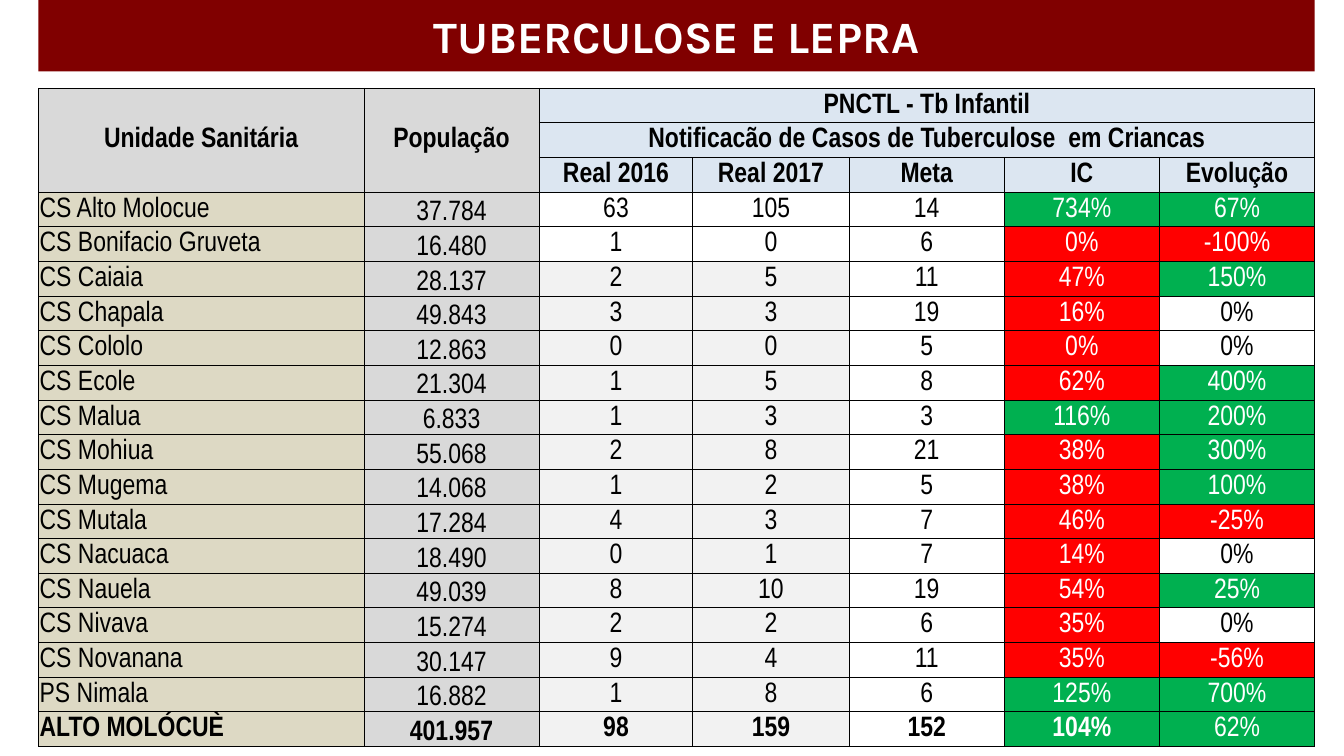
from dataclasses import dataclass

from lxml import etree
from pptx import Presentation
from pptx.dml.color import RGBColor
from pptx.enum.text import MSO_ANCHOR, MSO_AUTO_SIZE, PP_ALIGN
from pptx.oxml.ns import qn
from pptx.util import Cm, Pt

LEFT, CENTER = PP_ALIGN.LEFT, PP_ALIGN.CENTER
MIDDLE, BOTTOM = MSO_ANCHOR.MIDDLE, MSO_ANCHOR.BOTTOM
NO_AUTOFIT = MSO_AUTO_SIZE.NONE

TITLE = "TUBERCULOSE E LEPRA"
HEADERS = [
    ("Unidade Sanitária", "População", "PNCTL - Tb Infantil", "", "", "", ""),
    ("", "", "Notificacão de Casos de Tuberculose  em Criancas", "", "", "", ""),
    ("", "", "Real 2016", "Real 2017", "Meta", "IC", "Evolução"),
]
MERGES = [((0, 0), (2, 0)), ((0, 1), (2, 1)), ((0, 2), (0, 6)), ((1, 2), (1, 6))]
UNITS = [
    ("CS Alto Molocue", "37.784", 63, 105, 14, 734, 67),
    ("CS Bonifacio Gruveta", "16.480", 1, 0, 6, 0, -100),
    ("CS Caiaia", "28.137", 2, 5, 11, 47, 150),
    ("CS Chapala", "49.843", 3, 3, 19, 16, 0),
    ("CS Cololo", "12.863", 0, 0, 5, 0, 0),
    ("CS Ecole", "21.304", 1, 5, 8, 62, 400),
    ("CS Malua", "6.833", 1, 3, 3, 116, 200),
    ("CS Mohiua", "55.068", 2, 8, 21, 38, 300),
    ("CS Mugema", "14.068", 1, 2, 5, 38, 100),
    ("CS Mutala", "17.284", 4, 3, 7, 46, -25),
    ("CS Nacuaca", "18.490", 0, 1, 7, 14, 0),
    ("CS Nauela", "49.039", 8, 10, 19, 54, 25),
    ("CS Nivava", "15.274", 2, 2, 6, 35, 0),
    ("CS Novanana", "30.147", 9, 4, 11, 35, -56),
    ("PS Nimala", "16.882", 1, 8, 6, 125, 700),
    ("ALTO MOLÓCUÈ", "401.957", 98, 159, 152, 104, 62),
]
NAME, POPULATION, REAL_2016, REAL_2017, TARGET, INDEX, CHANGE = range(7)

COLUMN_WIDTHS = [8.2, 4.42, 3.87, 3.94, 3.91, 3.91, 3.91]
MARGIN, TABLE_TOP, TABLE_HEIGHT, BANNER_HEIGHT = 0.97, 2.22, 16.59, 1.8
TABLE_WIDTH = sum(COLUMN_WIDTHS)
CELL_INSET = 0.03


@dataclass(frozen=True)
class Theme:
    banner: str = "800000"
    grey: str = "D9D9D9"
    pale_grey: str = "F2F2F2"
    blue: str = "DCE6F1"
    sand: str = "DDD9C4"
    green: str = "00B050"
    red: str = "FF0000"
    white: str = "FFFFFF"
    black: str = "000000"
    title_font: str = "Karla"
    table_font: str = "Arial Narrow"
    title_size: int = 32
    table_size: int = 20
    border: float = 0.5


THEME = Theme()


def write(frame, text, font, size, color, bold, align=CENTER):
    para = frame.paragraphs[0]
    para.alignment = align
    span = para.add_run()
    span.text = text
    span.font.name = font
    span.font.size = Pt(size)
    span.font.bold = bold
    span.font.color.rgb = RGBColor.from_string(color)


def add_borders(cell):
    """Draw all four sides; the fill must be set afterwards to keep XML order."""
    properties = cell._tc.get_or_add_tcPr()
    for side in ("a:lnL", "a:lnR", "a:lnT", "a:lnB"):
        line = etree.SubElement(properties, qn(side), w=str(Pt(THEME.border)))
        solid = etree.SubElement(line, qn("a:solidFill"))
        etree.SubElement(solid, qn("a:srgbClr"), val=THEME.black)


def style_cell(cell, text, fill, color, bold, align=CENTER, anchor=MIDDLE):
    cell.margin_left = cell.margin_right = cell.margin_top = Cm(CELL_INSET)
    cell.margin_bottom = 0
    cell.vertical_anchor = anchor
    add_borders(cell)
    if fill:
        cell.fill.solid()
        cell.fill.fore_color.rgb = RGBColor.from_string(fill)
    else:
        cell.fill.background()
    if text:
        write(cell.text_frame, text, THEME.table_font, THEME.table_size, color, bold, align)


def unit_fill(row, column, value):
    """Return the fill of a data cell; None leaves it clear."""
    if column == INDEX:
        return THEME.green if value >= 100 else THEME.red
    if column == CHANGE:
        if value == 0:
            return THEME.white
        return THEME.green if value > 0 else THEME.red
    if column in (REAL_2016, REAL_2017):
        return THEME.pale_grey if row >= 2 else None
    return {NAME: THEME.sand, POPULATION: THEME.grey}.get(column)


def add_banner(page):
    banner = page.shapes.title
    banner.left, banner.top = Cm(MARGIN), Cm(0)
    banner.width, banner.height = Cm(TABLE_WIDTH), Cm(BANNER_HEIGHT)
    banner.fill.solid()
    banner.fill.fore_color.rgb = RGBColor.from_string(THEME.banner)
    frame = banner.text_frame
    frame.auto_size = NO_AUTOFIT
    frame.vertical_anchor = MIDDLE
    write(frame, TITLE, THEME.title_font, THEME.title_size, THEME.white, True)


def add_unit_table(page):
    row_count = len(HEADERS) + len(UNITS)
    table = page.shapes.add_table(
        row_count, len(COLUMN_WIDTHS),
        Cm(MARGIN), Cm(TABLE_TOP), Cm(TABLE_WIDTH), Cm(TABLE_HEIGHT),
    ).table
    table.first_row = table.horz_banding = False
    for column, width in zip(table.columns, COLUMN_WIDTHS):
        column.width = Cm(width)
    for row in table.rows:
        row.height = Cm(TABLE_HEIGHT / row_count)

    for row, labels in enumerate(HEADERS):
        for column, label in enumerate(labels):
            fill = THEME.grey if column <= POPULATION else THEME.blue
            style_cell(table.cell(row, column), label, fill, THEME.black, True)
    for first, last in MERGES:
        table.cell(*first).merge(table.cell(*last))

    for row, unit in enumerate(UNITS):
        is_total = row == len(UNITS) - 1
        for column, value in enumerate(unit):
            fill = unit_fill(row, column, value)
            style_cell(
                table.cell(len(HEADERS) + row, column),
                f"{value}%" if column >= INDEX else str(value),
                fill,
                THEME.white if fill in (THEME.green, THEME.red) else THEME.black,
                bold=is_total and column != CHANGE,
                align=LEFT if column == NAME else CENTER,
                anchor=BOTTOM if column == POPULATION else MIDDLE,
            )


def main():
    deck = Presentation()
    deck.slide_width, deck.slide_height = Cm(33.87), Cm(19.05)
    page = deck.slides.add_slide(deck.slide_layouts.get_by_name("Title Only"))
    add_banner(page)
    add_unit_table(page)
    deck.save("out.pptx")


if __name__ == "__main__":
    main()
